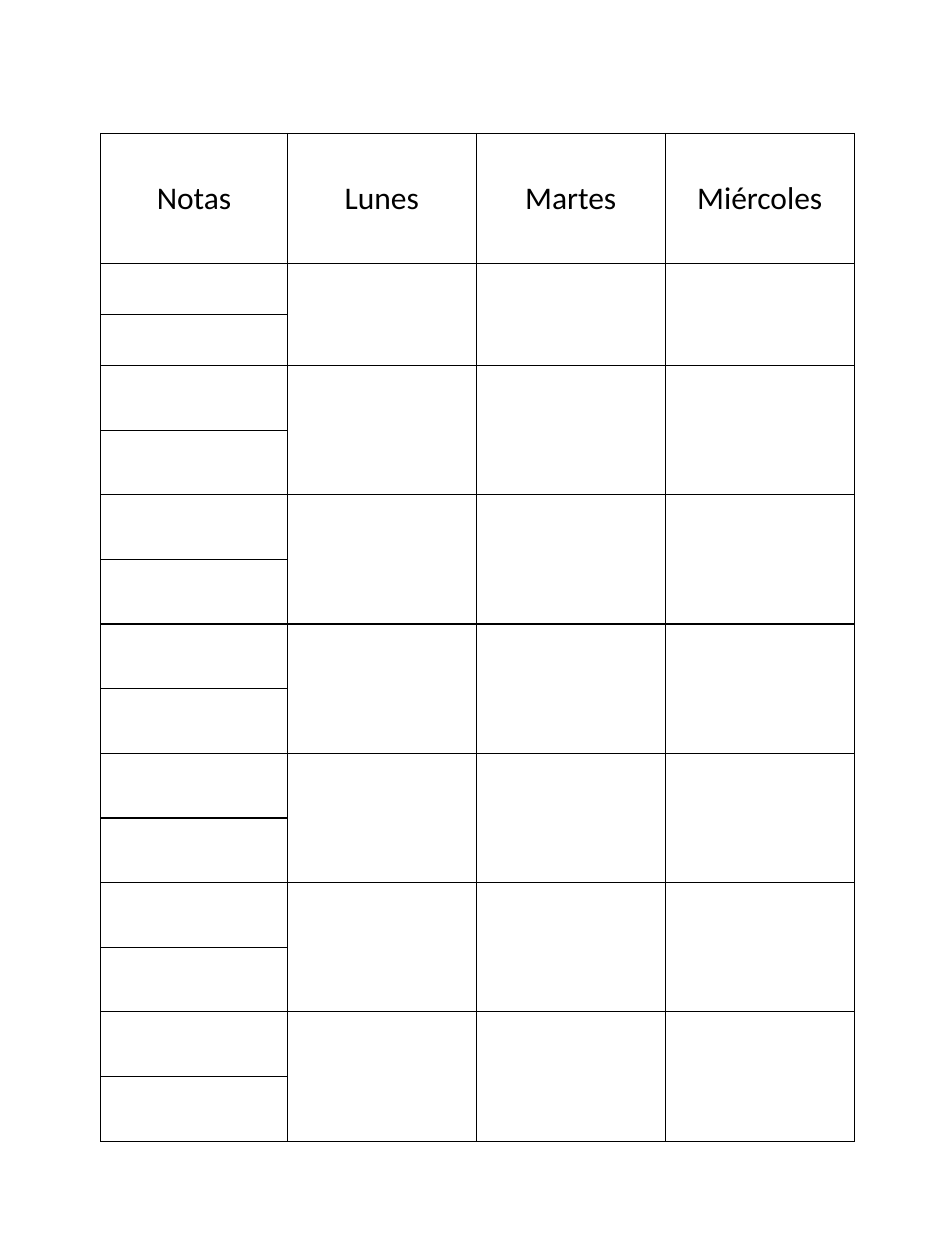
"""Build a weekly planner page with a notes column and three weekdays."""
from lxml import etree
from pptx import Presentation
from pptx import util as u
from pptx.dml.color import RGBColor
from pptx.enum import text
from pptx.oxml import ns

HEADS = ["Notas", "Lunes", "Martes", "Miércoles"]
WIDTHS = [1.48, 1.5, 1.5, 1.5]
LEFT, TOP, HEIGHT = 0.8, 1.06, 7.87
HEAD, SHORT = 1.03, 0.34
BLOCKS = 7
BLACK = RGBColor(0, 0, 0)


def write(cell, words, size=18, font="Calibri", color=BLACK):
    cell.vertical_anchor = text.MSO_ANCHOR.MIDDLE
    para = cell.text_frame.paragraphs[0]
    para.alignment = text.PP_ALIGN.CENTER
    run = para.add_run()
    run.text = words
    run.font.size = u.Pt(size)
    run.font.name = font
    run.font.color.rgb = color


def frame(cell, width=0.75, color=BLACK):
    props = cell._tc.get_or_add_tcPr()
    for side in ("lnL", "lnR", "lnT", "lnB"):
        line = etree.SubElement(props, ns.qn(f"a:{side}"), w=str(u.Pt(width)))
        fill = etree.SubElement(line, ns.qn("a:solidFill"))
        etree.SubElement(fill, ns.qn("a:srgbClr"), val=str(color))
    cell.fill.background()


def main():
    deck = Presentation()
    deck.slide_width, deck.slide_height = u.Inches(7.5), u.Inches(10)
    slide = deck.slides.add_slide(deck.slide_layouts[6])

    tall = (HEIGHT - HEAD - 2 * SHORT) / (2 * (BLOCKS - 1))
    rows = [HEAD] + [SHORT] * 2 + [tall] * (2 * (BLOCKS - 1))
    grid = slide.shapes.add_table(
        len(rows), len(WIDTHS), u.Inches(LEFT), u.Inches(TOP),
        u.Inches(sum(WIDTHS)), u.Inches(HEIGHT)).table
    grid.first_row = grid.horz_banding = False

    for col, width in zip(grid.columns, WIDTHS):
        col.width = u.Inches(width)
    for row, height in zip(grid.rows, rows):
        row.height = u.Inches(height)
    for cell in grid.iter_cells():
        frame(cell)
    for col, head in enumerate(HEADS):
        write(grid.cell(0, col), head)
    for top in range(1, len(rows), 2):
        for col in range(1, len(HEADS)):
            grid.cell(top, col).merge(grid.cell(top + 1, col))

    deck.save("out.pptx")


if __name__ == "__main__":
    main()
